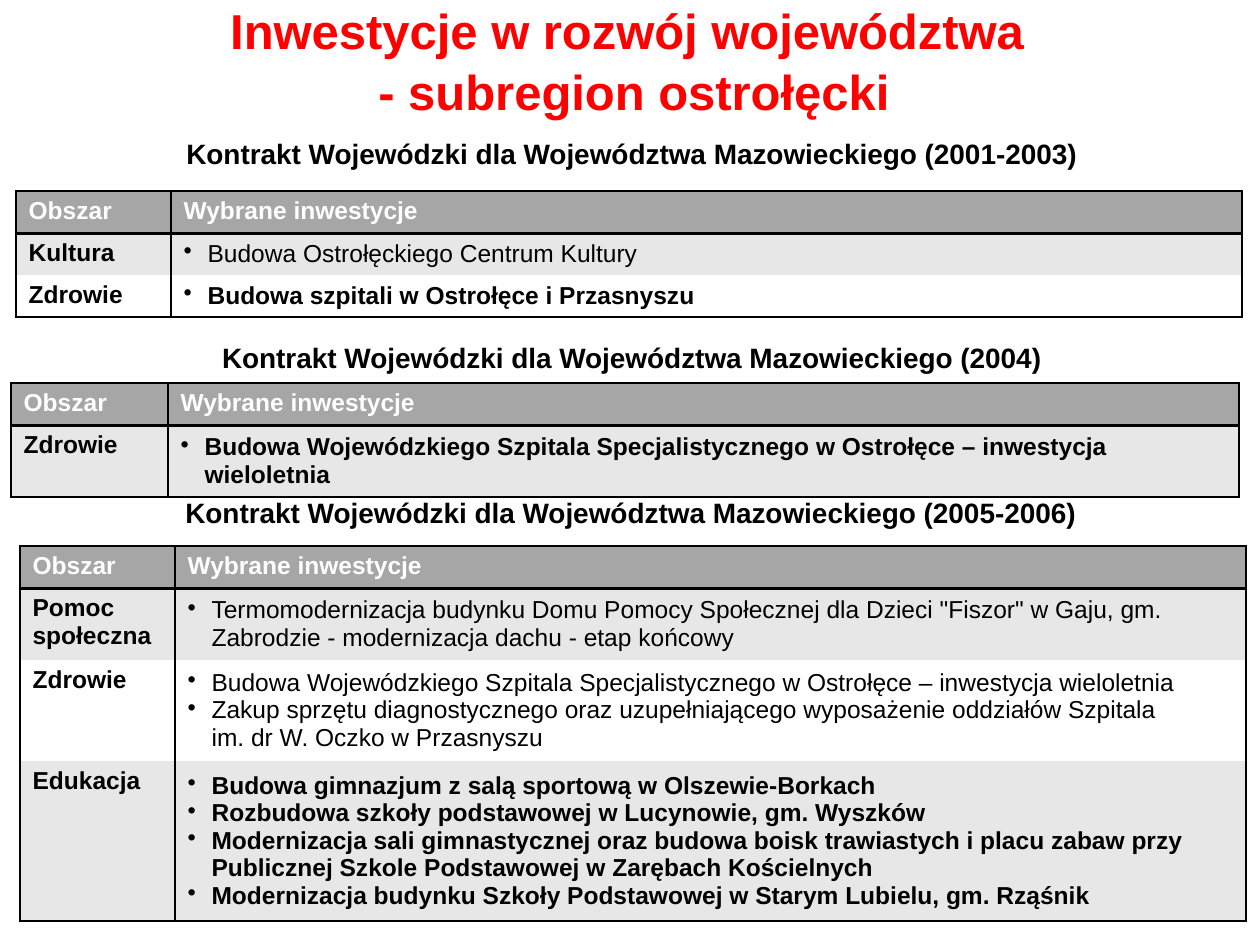
"""Build the slide on regional investments in the Ostrołęka subregion."""
import pptx
import pptx.util
import pptx.dml.color
import pptx.enum.text
import pptx.oxml
import pptx.oxml.ns

PX = 914400 // 126
HUES = {"title": "FF0000", "text": "000000", "head": "A6A6A6",
        "light": "FFFFFF", "band": "E7E7E7"}
ALIGN = pptx.enum.text.PP_ALIGN
ANCHOR = pptx.enum.text.MSO_ANCHOR
NS = pptx.oxml.ns.nsdecls("a")


def style(para, size, hue, bold):
    para.font.name = "Arial"
    para.font.size = pptx.util.Pt(size)
    para.font.bold = bold
    para.font.color.rgb = pptx.dml.color.RGBColor.from_string(HUES[hue])


def edge(cell, side, width):
    fill = f'<a:solidFill><a:srgbClr val="{HUES["text"]}"/></a:solidFill>'
    cell._tc.get_or_add_tcPr().append(pptx.oxml.parse_xml(
        f'<a:ln{side} {NS} w="{width * 12700}">{fill if width else "<a:noFill/>"}</a:ln{side}>'))


deck = pptx.Presentation()
deck.slide_width, deck.slide_height = 1260 * PX, 945 * PX
slide = deck.slides.add_slide(deck.slide_layouts[6])

heads = [
    ("Inwestycje w rozwój województwa \n- subregion ostrołęcki", 4, 16, 1260, 86, 28, "title"),
    ("Kontrakt Wojewódzki dla Województwa Mazowieckiego (2001-2003)", 17, 130, 1230, 38, 16, "text"),
    ("Kontrakt Wojewódzki dla Województwa Mazowieckiego (2004)", 17, 334, 1230, 38, 16, "text"),
    ("Kontrakt Wojewódzki dla Województwa Mazowieckiego (2005-2006)", 16, 489, 1230, 38, 16, "text"),
]
for text, left, top, width, height, size, hue in heads:
    box = slide.shapes.add_textbox(left * PX, top * PX, width * PX, height * PX)
    frame = box.text_frame
    frame.word_wrap = True
    para = frame.paragraphs[0]
    para.text = text
    para.alignment = ALIGN.CENTER
    if hue == "title":
        frame.vertical_anchor = ANCHOR.MIDDLE
        para.line_spacing = 1.05
    style(para, size, hue, True)

tables = [
    (16, 191, 155, [
        (42, "Kultura", False, ["Budowa Ostrołęckiego Centrum Kultury"]),
        (42, "Zdrowie", True, ["Budowa szpitali w Ostrołęce i Przasnyszu"]),
    ]),
    (11, 383, 157, [
        (72, "Zdrowie", True, [
            "Budowa Wojewódzkiego Szpitala Specjalistycznego w Ostrołęce – inwestycja wieloletnia"]),
    ]),
    (20, 546, 155, [
        (72, "Pomoc społeczna", False, [
            'Termomodernizacja budynku Domu Pomocy Społecznej dla Dzieci "Fiszor" w Gaju, gm. '
            "Zabrodzie - modernizacja dachu - etap końcowy"]),
        (101, "Zdrowie", False, [
            "Budowa Wojewódzkiego Szpitala Specjalistycznego w Ostrołęce – inwestycja wieloletnia",
            "Zakup sprzętu diagnostycznego oraz uzupełniającego wyposażenie oddziałów Szpitala \n"
            "im. dr W. Oczko w Przasnyszu"]),
        (160, "Edukacja", True, [
            "Budowa gimnazjum z salą sportową w Olszewie-Borkach",
            "Rozbudowa szkoły podstawowej w Lucynowie, gm. Wyszków",
            "Modernizacja sali gimnastycznej oraz budowa boisk trawiastych i placu zabaw przy "
            "Publicznej Szkole Podstawowej w Zarębach Kościelnych",
            "Modernizacja budynku Szkoły Podstawowej w Starym Lubielu, gm. Rząśnik"]),
    ]),
]
for left, top, first, body in tables:
    rows = [(42, "Obszar", True, ["Wybrane inwestycje"])] + body
    wide = 1071
    high = sum(row[0] for row in rows)
    grid = slide.shapes.add_table(len(rows), 2, left * PX, top * PX,
                                  (first + wide) * PX, high * PX).table
    grid.horz_banding = False
    grid.columns[0].width, grid.columns[1].width = first * PX, wide * PX
    for r, (height, area, bold, items) in enumerate(rows):
        grid.rows[r].height = height * PX
        fill = "head" if r == 0 else "band" if r % 2 else "light"
        for c, lines in enumerate([[area], items]):
            cell = grid.cell(r, c)
            above = {0: 1, 1: 2}.get(r, 0)
            below = 2 if r == 0 else int(r == len(rows) - 1)
            for side, width in zip("LRTB", (1, 1, above, below)):
                edge(cell, side, width)
            cell.fill.solid()
            cell.fill.fore_color.rgb = pptx.dml.color.RGBColor.from_string(HUES[fill])
            listed = r > 0 and c == 1
            if listed:
                cell.vertical_anchor = ANCHOR.MIDDLE
            frame = cell.text_frame
            for n, line in enumerate(lines):
                para = frame.add_paragraph() if n else frame.paragraphs[0]
                para.text = line
                if listed:
                    props = para._p.get_or_add_pPr()
                    props.set("marL", str(24 * PX))
                    props.set("indent", str(-24 * PX))
                    props.append(pptx.oxml.parse_xml(f'<a:buChar {NS} char="•"/>'))
                style(para, 14, "text" if r else "light", bold or c == 0)

deck.save("out.pptx")
